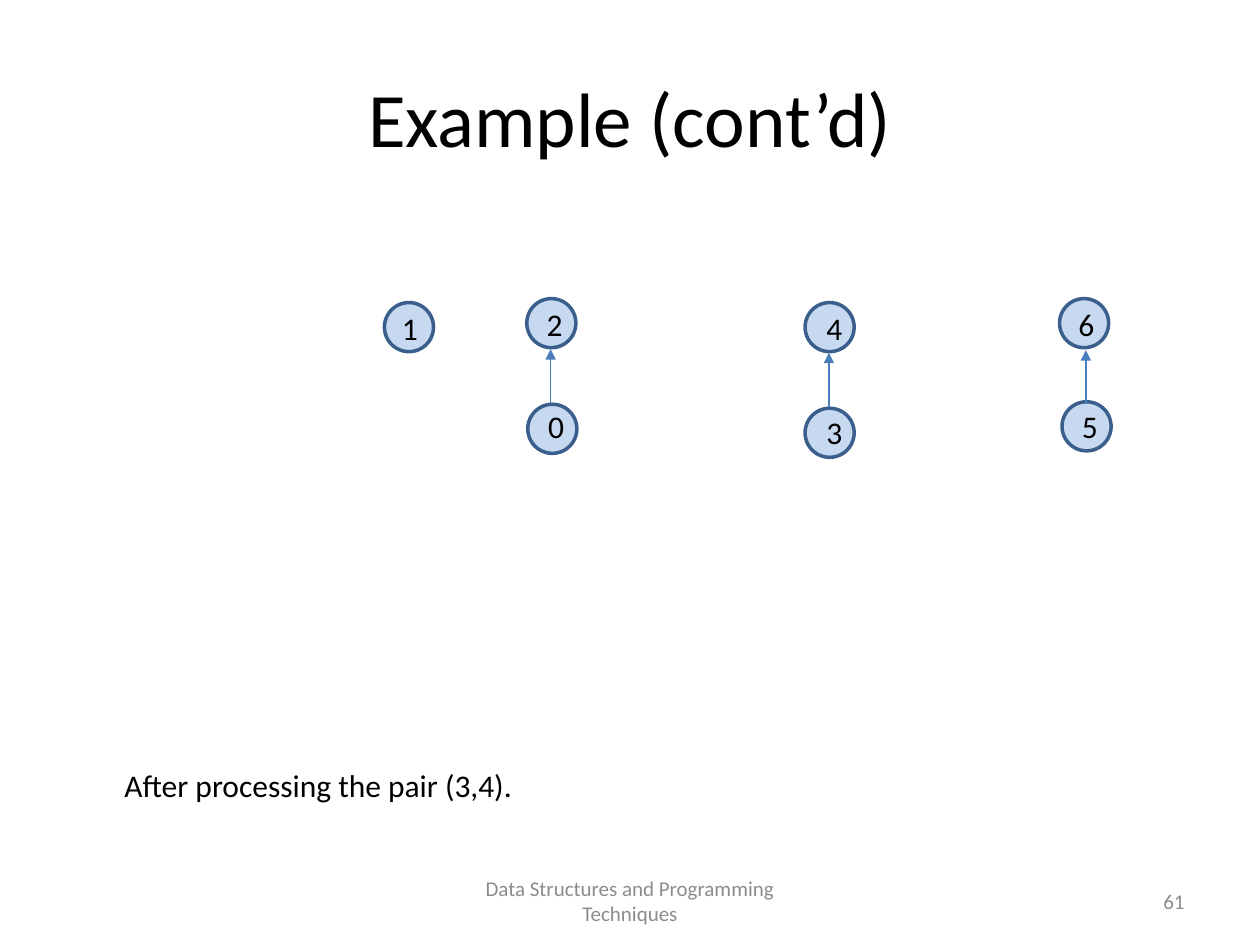
from dataclasses import dataclass

from lxml.etree import SubElement
from pptx import Presentation
from pptx.dml.color import RGBColor
from pptx.enum.shapes import MSO_CONNECTOR, MSO_SHAPE
from pptx.enum.text import MSO_ANCHOR, PP_ALIGN
from pptx.oxml.ns import qn
from pptx.util import Cm, Pt


@dataclass(frozen=True)
class Theme:
    font: str = "Calibri"
    text: str = "000000"
    muted: str = "8C8C8C"
    node_fill: str = "C6D9F1"
    node_line: str = "3A5F8C"
    arrow: str = "4B7EBC"
    title_size: int = 44
    body_size: int = 18
    footer_size: int = 12


NODE_DIAMETER = 0.99
LABEL_WIDTH = 0.69
LINE_HEIGHT = 1.02
ARROW_LENGTH = 1.09

# label: (circle left, circle top, label left, label top)
NODES = {
    "0": (10.64, 8.15, 10.80, 8.08),
    "1": (7.75, 6.10, 7.85, 6.10),
    "2": (10.62, 6.02, 10.77, 6.02),
    "6": (21.36, 6.02, 21.49, 6.02),
    "5": (21.41, 8.10, 21.56, 8.08),
    "4": (16.23, 6.10, 16.41, 6.10),
    "3": (16.23, 8.23, 16.41, 8.20),
}

# x and start height of each arrow from child up to parent
PARENT_ARROWS = [(11.10, 8.13), (21.89, 8.15), (16.71, 8.20)]


def write_text(frame, text, *, font, size, color,
               align=PP_ALIGN.LEFT, anchor=MSO_ANCHOR.TOP):
    frame.word_wrap = True
    frame.vertical_anchor = anchor
    paragraph = frame.paragraphs[0]
    paragraph.alignment = align
    run = paragraph.add_run()
    run.text = text
    run.font.name = font
    run.font.size = Pt(size)
    run.font.color.rgb = RGBColor.from_string(color)


class SlideBuilder:
    def __init__(self, slide, theme):
        self.slide = slide
        self.theme = theme

    def title(self, text, left, top, width, height):
        shape = self.slide.shapes.title
        shape.left, shape.top = Cm(left), Cm(top)
        shape.width, shape.height = Cm(width), Cm(height)
        write_text(shape.text_frame, text, font=self.theme.font,
                   size=self.theme.title_size, color=self.theme.text,
                   align=PP_ALIGN.CENTER, anchor=MSO_ANCHOR.MIDDLE)

    def text(self, text, left, top, width, **text_format):
        box = self.slide.shapes.add_textbox(
            Cm(left), Cm(top), Cm(width), Cm(LINE_HEIGHT))
        defaults = dict(font=self.theme.font, size=self.theme.body_size,
                        color=self.theme.text)
        write_text(box.text_frame, text, **(defaults | text_format))

    def footer(self, text, left, width, align):
        self.text(text, left, 17.65, width, align=align,
                  anchor=MSO_ANCHOR.MIDDLE, size=self.theme.footer_size,
                  color=self.theme.muted)

    def circle(self, left, top):
        shape = self.slide.shapes.add_shape(
            MSO_SHAPE.OVAL, Cm(left), Cm(top),
            Cm(NODE_DIAMETER), Cm(NODE_DIAMETER))
        shape.shadow.inherit = False
        shape.fill.solid()
        shape.fill.fore_color.rgb = RGBColor.from_string(self.theme.node_fill)
        shape.line.color.rgb = RGBColor.from_string(self.theme.node_line)
        shape.line.width = Pt(2)

    def up_arrow(self, x, start):
        connector = self.slide.shapes.add_connector(
            MSO_CONNECTOR.STRAIGHT, Cm(x), Cm(start),
            Cm(x), Cm(start - ARROW_LENGTH))
        connector.line.color.rgb = RGBColor.from_string(self.theme.arrow)
        connector.line.width = Pt(1)
        SubElement(connector.line._get_or_add_ln(), qn("a:tailEnd"),
                   type="triangle")
        SubElement(connector._element.spPr, qn("a:effectLst"))


def main():
    presentation = Presentation()
    presentation.slide_width, presentation.slide_height = Cm(25.4), Cm(19.05)
    title_only = presentation.slide_layouts[5]
    builder = SlideBuilder(presentation.slides.add_slide(title_only), Theme())

    builder.title("Example (cont’d)", 1.27, 0.76, 22.86, 3.18)
    builder.footer("Data Structures and Programming Techniques",
                   8.68, 8.04, PP_ALIGN.CENTER)
    builder.footer("61", 18.2, 5.93, PP_ALIGN.RIGHT)

    for label, (left, top, label_left, label_top) in NODES.items():
        builder.circle(left, top)
        builder.text(label, label_left, label_top, LABEL_WIDTH,
                     align=PP_ALIGN.CENTER)
    builder.text("After processing the pair (3,4).", 2.26, 15.32, 18.44)
    for x, start in PARENT_ARROWS:
        builder.up_arrow(x, start)

    presentation.save("out.pptx")


if __name__ == "__main__":
    main()
